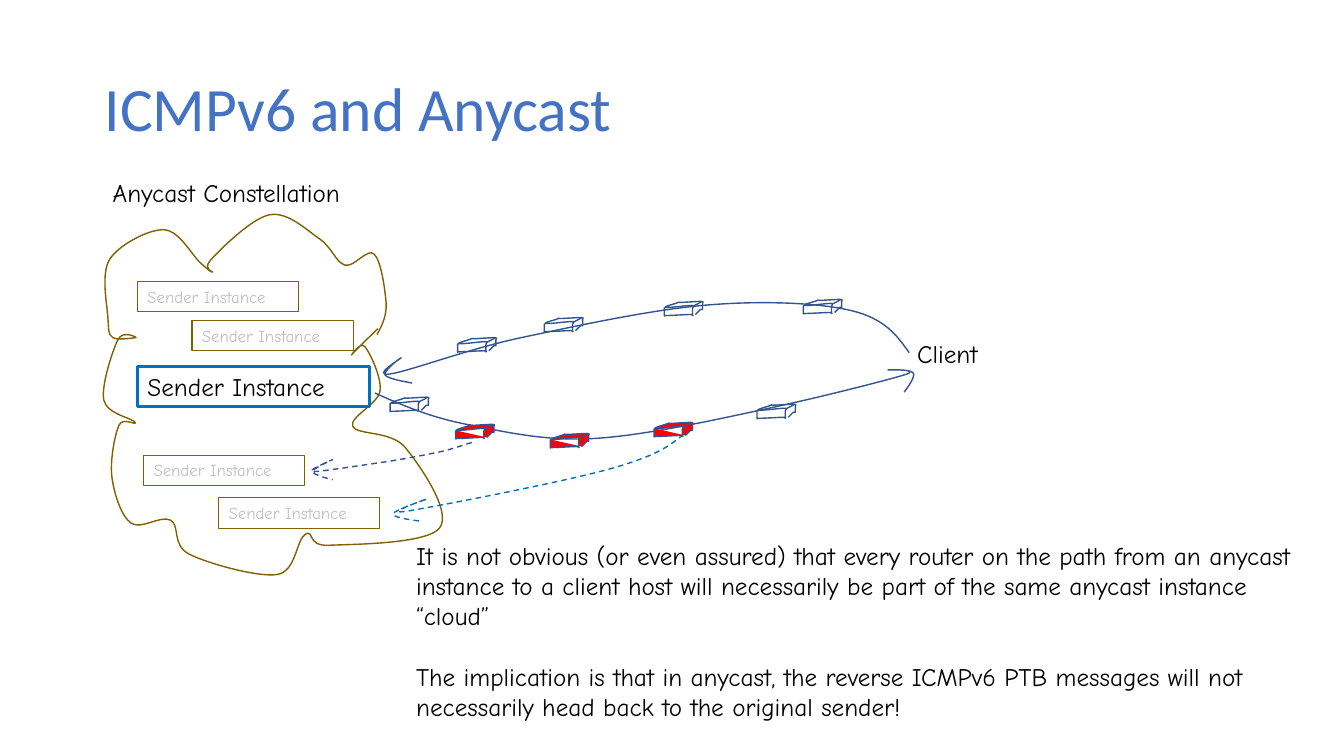
import itertools

import pptx
import pptx.dml.color
import pptx.enum.dml
import pptx.enum.shapes
import pptx.enum.text
import pptx.oxml.ns
import pptx.util
from lxml import etree

# All coordinates are hundredths of an inch.
UNIT = pptx.util.Cm(0.0254)
SLIDE_SIZE = (1333.33, 750)

THEME = {
    "title_font": "Calibri", "body_font": "Comic Neue",
    "title_size": 44, "body_size": 18, "small_size": 12,
    "title_spacing": 0.9, "paragraph_gap": 21.5,
    "title": "4472C4", "text": "000000", "muted": "BFBFBF",
    "network": "325491", "cloud": "806000", "active": "0070C0", "alert": "FF0000",
    "thin": 0.75, "normal": 1, "thick": 2.25,
}

TITLE = ("ICMPv6 and Anycast", (94, 38, 1150, 145))
LABELS = [
    ("Anycast Constellation", (102, 171, 301, 40)),
    ("Client", (900, 331, 101, 40)),
]
EXPLANATION_BOX = (403, 531, 913, 222)
EXPLANATION = [
    "It is not obvious (or even assured) that every router on the path from an anycast "
    "instance to a client host will necessarily be part of the same anycast instance “cloud”",
    "The implication is that in anycast, the reverse ICMPv6 PTB messages will not "
    "necessarily head back to the original sender!",
]

INSTANCE = "Sender Instance"
ACTIVE_INSTANCE = (136.5, 363.5, 230, 40)
IDLE_SIZE = (160, 30)
IDLE_INSTANCES = [(136.5, 279), (190.5, 318), (142.5, 451.5), (217, 494)]

# Hand-drawn lines are given by the points they pass through; smooth() bends them.
# The cloud runs anticlockwise from its upper right.
CLOUD = {
    "right shoulder": [(374, 332), (383, 300), (371, 252), (342, 263)],
    "crest": [(317, 237), (268, 213), (209, 258), (211, 270)],
    "left shoulder": [(199, 261), (163, 228), (109, 257), (107, 314), (112, 335), (135, 335)],
    "left side": [(117, 337), (103, 397), (134, 419), (118, 422), (111, 473), (130, 519)],
    "base": [(169, 516), (188, 550), (275, 570), (303, 530), (326, 541)],
    "right side": [(436, 524), (402, 444), (350, 423), (377, 388), (362, 344),
                   (349, 352), (375, 326)],
}

# Each arrow has a shaft and a head drawn as barb, tip, barb.
ARROWS = {
    "sender to client": {
        "shaft": [(372, 390), (463, 421), (590, 435), (763, 405), (897, 372)],
        "head": [(881, 367), (906, 370), (897, 389)],
        "color": "network", "dashed": False,
    },
    "client to sender": {
        "shaft": [(902, 350), (844, 308), (697, 303), (517, 335), (387, 371)],
        "head": [(398, 355), (382, 372), (409, 380)],
        "color": "network", "dashed": False,
    },
    "PTB from first router": {
        "shaft": [(468, 439), (433, 449), (377, 459), (310, 468)],
        "head": [(330, 456), (310, 468), (330, 476)],
        "color": "network", "dashed": True,
    },
    "PTB from third router": {
        "shaft": [(678, 431), (606, 465), (405, 507)],
        "head": [(424, 495), (390, 510), (417, 517)],
        "color": "active", "dashed": True,
    },
}

# One router, measured from its own top left corner.
ROUTER = {
    "front": [(0, 6), (0, 14), (3, 14), (26, 13), (28, 14), (28, 7), (27, 4), (4, 6)],
    "top": [(2, 5), (14, 1), (16, 1), (36, 0)],
    "side": [(38, 2), (38, 8), (36, 8), (31, 13)],
}
ROUTER_CORNER_EDGE = [(28, 5), (34, 2), (37, 0)]
# Places of the routers, with the fill they share.
ROUTERS = {
    "foreign": ("alert", [(452, 421), (546, 430), (649, 419)]),
    "forward": (None, [(387, 394), (751, 401)]),
    "return": (None, [(797, 297), (659, 299), (540, 315), (454, 335)]),
}


def scaled(values):
    return [round(value * UNIT) for value in values]


def color(name):
    return pptx.dml.color.RGBColor.from_string(THEME[name])


def joined(parts):
    return list(itertools.chain.from_iterable(parts))


def smooth(anchors):
    """Return (control, control, end) for each span of a curve through the anchors.

    At an inner anchor the tangent is parallel to the line between its neighbours,
    and a control lies a sixth of that line away. Both ends are left free.
    """
    def control(index, direction):
        before, here, after = anchors[index - 1:index + 2]
        return tuple(h + direction * (a - b) / 6 for b, h, a in zip(before, here, after))

    last = len(anchors) - 1
    spans = []
    for index in range(last):
        end = anchors[index + 1]
        arriving = control(index + 1, -1) if index + 1 < last else end
        if index:
            leaving = control(index, 1)
        else:
            leaving = tuple((s + c) / 2 for s, c in zip(anchors[0], arriving))
        spans.append((leaving, arriving, end))
    return spans


def style(shape, line, width, fill=None):
    shape.shadow.inherit = False
    shape.line.color.rgb = color(line)
    shape.line.width = pptx.util.Pt(THEME[width])
    if fill:
        shape.fill.solid()
        shape.fill.fore_color.rgb = color(fill)
    else:
        shape.fill.background()


def write(shape, paragraphs, size="body_size", ink="text", font="body_font",
          anchor=pptx.enum.text.MSO_ANCHOR.TOP):
    frame = shape.text_frame
    frame.word_wrap = True
    frame.vertical_anchor = anchor
    for index, words in enumerate(paragraphs):
        paragraph = frame.add_paragraph() if index else frame.paragraphs[0]
        paragraph.alignment = pptx.enum.text.PP_ALIGN.LEFT
        if index:
            paragraph.space_before = pptx.util.Pt(THEME["paragraph_gap"])
        run = paragraph.add_run()
        run.text = words
        run.font.name = THEME[font]
        run.font.size = pptx.util.Pt(THEME[size])
        run.font.color.rgb = color(ink)


def add_curve(shapes, anchors, line, fill=None, origin=(0, 0)):
    """Build a freeform through all points, then turn each three into a cubic."""
    builder = shapes.build_freeform(*anchors[0], scale=UNIT)
    builder.add_line_segments(joined(smooth(anchors)), close=False)
    curve = builder.convert_to_shape(*scaled(origin))
    qn = pptx.oxml.ns.qn
    outline = next(curve._element.iter(qn("a:path")))
    steps = outline.findall(qn("a:lnTo"))
    for first in range(0, len(steps), 3):
        cubic = etree.SubElement(outline, qn("a:cubicBezTo"))
        for step in steps[first:first + 3]:
            cubic.append(step[0])
            outline.remove(step)
    style(curve, line, "normal", fill)
    return curve


def add_instance(shapes, box, line, width, size, ink):
    instance = shapes.add_shape(pptx.enum.shapes.MSO_SHAPE.RECTANGLE, *scaled(box))
    style(instance, line, width)
    write(instance, [INSTANCE], size, ink, anchor=pptx.enum.text.MSO_ANCHOR.MIDDLE)


def main():
    deck = pptx.Presentation()
    deck.slide_width, deck.slide_height = scaled(SLIDE_SIZE)
    shapes = deck.slides.add_slide(deck.slide_layouts[6]).shapes

    heading, heading_box = TITLE
    title = shapes.add_textbox(*scaled(heading_box))
    write(title, [heading], "title_size", "title", "title_font",
          pptx.enum.text.MSO_ANCHOR.MIDDLE)
    title.text_frame.paragraphs[0].line_spacing = THEME["title_spacing"]

    add_curve(shapes, joined(CLOUD.values()), "cloud")
    for arrow in ARROWS.values():
        drawn = add_curve(shapes, arrow["shaft"] + arrow["head"], arrow["color"])
        if arrow["dashed"]:
            drawn.line.dash_style = pptx.enum.dml.MSO_LINE.DASH
    for fill, places in ROUTERS.values():
        for place in places:
            router = shapes.add_group_shape()
            for outline in (joined(ROUTER.values()), ROUTER_CORNER_EDGE):
                add_curve(router.shapes, outline, "network", fill, place)

    add_instance(shapes, ACTIVE_INSTANCE, "active", "thick", "body_size", "text")
    for place in IDLE_INSTANCES:
        add_instance(shapes, place + IDLE_SIZE, "cloud", "thin", "small_size", "muted")
    for words, box in LABELS:
        write(shapes.add_textbox(*scaled(box)), [words])
    write(shapes.add_textbox(*scaled(EXPLANATION_BOX)), EXPLANATION)
    deck.save("out.pptx")


if __name__ == "__main__":
    main()
